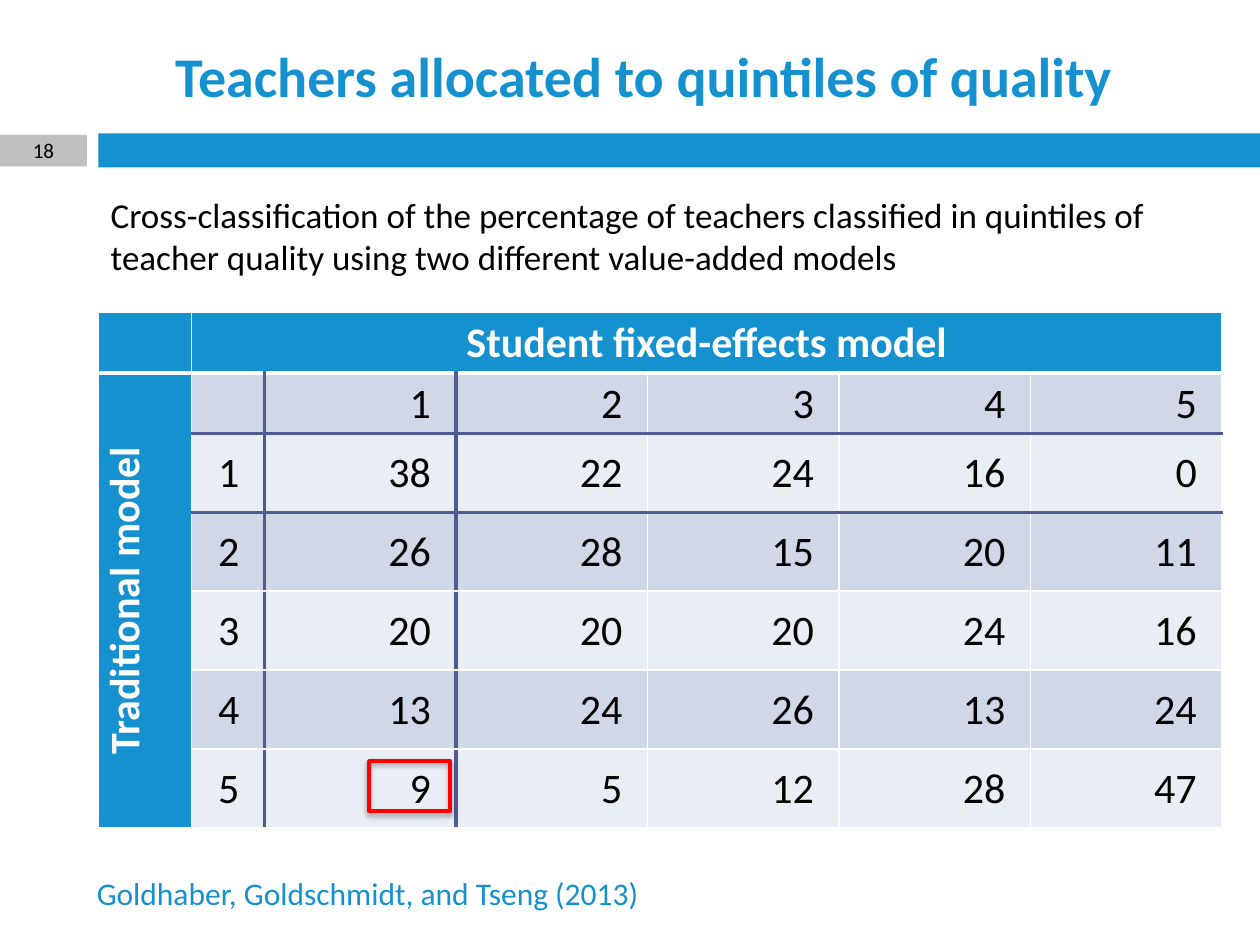
from dataclasses import dataclass

from lxml import etree
from pptx import Presentation
from pptx.dml.color import RGBColor
from pptx.enum.shapes import MSO_SHAPE
from pptx.enum.text import MSO_ANCHOR, PP_ALIGN
from pptx.oxml.ns import qn
from pptx.util import Inches, Pt

RECT = MSO_SHAPE.RECTANGLE
TOP, MIDDLE = MSO_ANCHOR.TOP, MSO_ANCHOR.MIDDLE
LEFT, CENTER, RIGHT = PP_ALIGN.LEFT, PP_ALIGN.CENTER, PP_ALIGN.RIGHT
TITLE_ONLY = 5
COLS, ROWS = 100, 75


@dataclass(frozen=True)
class Theme:
    font: str = "Calibri"
    blue: str = "1691D0"
    gray: str = "BFBFBF"
    white: str = "FFFFFF"
    black: str = "000000"
    red: str = "FF0000"
    rule: str = "525A93"
    dark: str = "D0D8E8"
    light: str = "E9EDF4"
    title: int = 32
    table: int = 24
    body: int = 20
    source: int = 18
    page: int = 12
    thin: float = 1
    bold: float = 2.25
    thick: float = 3


def rgb(code):
    return RGBColor.from_string(code)


def write(frame, text, size, color, font, bold=False, align=LEFT, anchor=TOP):
    frame.word_wrap = True
    frame.vertical_anchor = anchor
    para = frame.paragraphs[0]
    para.alignment = align
    run = para.add_run()
    run.text = text
    run.font.name = font
    run.font.size = Pt(size)
    run.font.bold = bold
    run.font.color.rgb = rgb(color)


def node(parent, tag, **attrs):
    return etree.SubElement(parent, qn(tag), {k: str(v) for k, v in attrs.items()})


class Page:
    def __init__(self, deck, theme):
        self.theme = theme
        self.slide = deck.slides.add_slide(deck.slide_layouts[TITLE_ONLY])
        self.unit_x = deck.slide_width / COLS
        self.unit_y = deck.slide_height / ROWS

    def place(self, x, y, w, h):
        return (round(x * self.unit_x), round(y * self.unit_y),
                round(w * self.unit_x), round(h * self.unit_y))

    def title(self, text, at):
        shape = self.slide.shapes.title
        shape.left, shape.top, shape.width, shape.height = self.place(*at)
        write(shape.text_frame, text, self.theme.title, self.theme.blue,
              self.theme.font, bold=True, align=CENTER, anchor=MIDDLE)

    def text(self, text, at, size, color, **style):
        box = self.slide.shapes.add_textbox(*self.place(*at))
        write(box.text_frame, text, size, color, self.theme.font, **style)

    def bar(self, at, color):
        shape = self.slide.shapes.add_shape(RECT, *self.place(*at))
        shape.shadow.inherit = False
        shape.fill.solid()
        shape.fill.fore_color.rgb = rgb(color)
        shape.line.fill.background()

    def frame(self, at):
        shape = self.slide.shapes.add_shape(RECT, *self.place(*at))
        shape.shadow.inherit = False
        shape.fill.background()
        shape.line.color.rgb = rgb(self.theme.red)
        shape.line.width = Pt(self.theme.bold)
        effects = shape._element.spPr.find(qn("a:effectLst"))
        shade = node(effects, "a:outerShdw", blurRad=Pt(3.1), dist=Pt(1.8),
                     dir=5400000, rotWithShape=0)
        tint = node(shade, "a:srgbClr", val=self.theme.black)
        node(tint, "a:alpha", val=35000)

    def edges(self, cell, row, col):
        theme = self.theme
        sides = dict.fromkeys("LRTB", (theme.white, theme.thin))
        if row == 0:
            sides["B"] = (theme.white, theme.thick)
        elif col > 0:
            if col <= 2:
                sides["R"] = (theme.rule, theme.bold)
            if row <= 2:
                sides["B"] = (theme.rule, theme.bold)
        props = cell._tc.get_or_add_tcPr()
        for side, (color, width) in sides.items():
            line = node(props, f"a:ln{side}", w=Pt(width))
            node(node(line, "a:solidFill"), "a:srgbClr", val=color)

    def table(self, data, at, widths, heights):
        theme = self.theme
        table = self.slide.shapes.add_table(
            len(data), len(widths), *self.place(*at)).table
        for col, width in zip(table.columns, widths):
            col.width = round(width * self.unit_x)
        for row, height in zip(table.rows, heights):
            row.height = round(height * self.unit_y)
        for r, values in enumerate(data):
            for c, value in enumerate(values):
                cell = table.cell(r, c)
                head = r == 0 or c == 0
                self.edges(cell, r, c)
                cell.fill.solid()
                shade = theme.blue if head else (theme.dark if r % 2 else theme.light)
                cell.fill.fore_color.rgb = rgb(shade)
                if value == "":
                    continue
                cell.margin_left = cell.margin_top = Inches(0.01)
                cell.margin_right = Inches(0.01 if head else 0.2)
                cell.margin_bottom = 0
                cell.vertical_anchor = MIDDLE
                write(cell.text_frame, str(value), theme.table,
                      theme.white if head else theme.black, theme.font,
                      bold=head, align=CENTER if head else RIGHT, anchor=MIDDLE)
        table.cell(0, 1).merge(table.cell(0, len(widths) - 1))
        side = table.cell(1, 0)
        side.merge(table.cell(len(data) - 1, 0))
        side._tc.get_or_add_tcPr().set("vert", "vert270")


def main():
    deck = Presentation()
    deck.slide_width, deck.slide_height = Inches(10), Inches(7.5)
    theme = Theme()
    page = Page(deck, theme)
    badge = (0, 10.7, 6.9, 2.5)
    page.bar((7.8, 10.6, 92.2, 2.7), theme.blue)
    page.bar(badge, theme.gray)
    page.title("Teachers allocated to quintiles of quality", (7.8, 2.6, 86.6, 6.8))

    shares = [
        [38, 22, 24, 16, 0],
        [26, 28, 15, 20, 11],
        [20, 20, 20, 24, 16],
        [13, 24, 26, 13, 24],
        [9, 5, 12, 28, 47],
    ]
    data = [
        ["", "Student fixed-effects model"] + [""] * 5,
        ["Traditional model", "", 1, 2, 3, 4, 5],
        *(["", rank, *row] for rank, row in enumerate(shares, 1)),
    ]
    page.table(data, (7.8, 24.8, 89.2, 40.9),
               [7.4, 5.8] + [15.2] * 5, [4.8] * 2 + [6.26] * 5)

    page.text("Goldhaber, Goldschmidt, and Tseng (2013)",
              (6.7, 68.9, 58.4, 4), theme.source, theme.blue)
    page.text("Cross-classification of the percentage of teachers classified in "
              "quintiles of teacher quality using two different value-added models",
              (7.8, 14.9, 88, 7.7), theme.body, theme.black)
    page.text("18", badge, theme.page, theme.black, align=CENTER, anchor=MIDDLE)
    page.frame((29.3, 60.4, 6.4, 4))
    deck.save("out.pptx")


if __name__ == "__main__":
    main()
